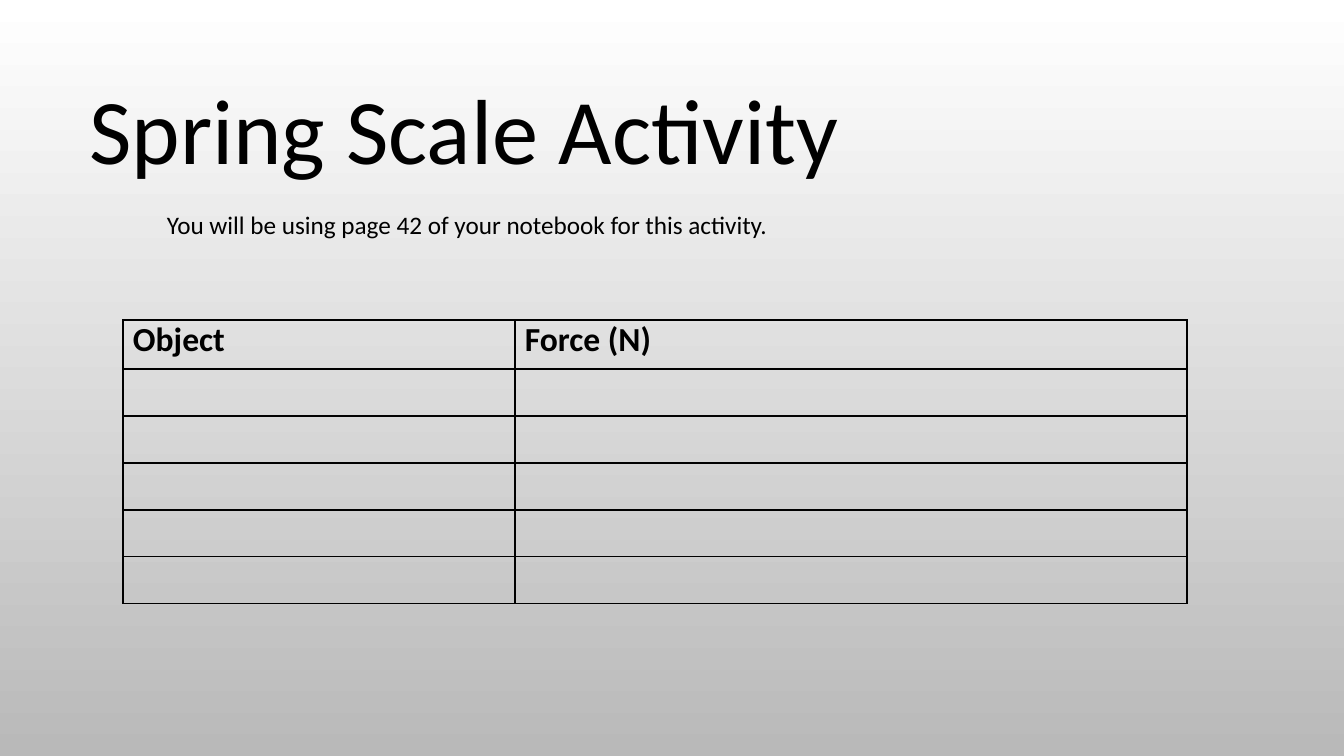
from dataclasses import dataclass

import pptx
import pptx.dml.color
import pptx.enum.text
import pptx.oxml
import pptx.oxml.ns
import pptx.util


@dataclass(frozen=True)
class Theme:
    font: str = "Calibri"
    ink: str = "000000"
    backdrop: tuple = ("FFFFFF", "B9B9B9")
    title_size: int = 66
    note_size: int = 18
    header_size: int = 24
    border_width: int = 1


class SlideBuilder:
    EMU_PER_PX = 914400 / 100.8

    def __init__(self, theme, width, height):
        self.theme = theme
        self.deck = pptx.Presentation()
        self.deck.slide_width = self.px(width)
        self.deck.slide_height = self.px(height)
        self.slide = self.deck.slides.add_slide(self.deck.slide_layouts[5])

    def px(self, length):
        return pptx.util.Emu(round(length * self.EMU_PER_PX))

    def color(self, code):
        return pptx.dml.color.RGBColor.from_string(code)

    def background(self):
        fill = self.slide.background.fill
        fill.gradient()
        fill.gradient_angle = 270
        for stop, code in zip(fill.gradient_stops, self.theme.backdrop):
            stop.color.rgb = self.color(code)

    def set_text(self, frame, text, size, bold=False):
        frame.text = text
        paragraph = frame.paragraphs[0]
        paragraph.alignment = pptx.enum.text.PP_ALIGN.LEFT
        for run in paragraph.runs:
            run.font.name = self.theme.font
            run.font.size = pptx.util.Pt(size)
            run.font.bold = bold
            run.font.color.rgb = self.color(self.theme.ink)

    def fit_frame(self, frame):
        frame.word_wrap = True
        frame.auto_size = pptx.enum.text.MSO_AUTO_SIZE.NONE
        frame.vertical_anchor = pptx.enum.text.MSO_ANCHOR.TOP

    def title(self, text, left, top, width, height):
        heading = self.slide.shapes.title
        heading.left, heading.top = self.px(left), self.px(top)
        heading.width, heading.height = self.px(width), self.px(height)
        self.fit_frame(heading.text_frame)
        self.set_text(heading.text_frame, text, self.theme.title_size)

    def note(self, text, left, top, width, height):
        box = self.slide.shapes.add_textbox(
            self.px(left), self.px(top), self.px(width), self.px(height))
        self.fit_frame(box.text_frame)
        self.set_text(box.text_frame, text, self.theme.note_size)

    def outline(self, cell):
        properties = cell._tc.get_or_add_tcPr()
        width = pptx.util.Pt(self.theme.border_width)
        for side in ("lnL", "lnR", "lnT", "lnB"):
            properties.append(pptx.oxml.parse_xml(
                f'<a:{side} {pptx.oxml.ns.nsdecls("a")} w="{width}">'
                f'<a:solidFill><a:srgbClr val="{self.theme.ink}"/></a:solidFill>'
                f'</a:{side}>'))

    def table(self, headers, left, top, column_widths, row_heights):
        grid = self.slide.shapes.add_table(
            len(row_heights), len(column_widths), self.px(left), self.px(top),
            self.px(sum(column_widths)), self.px(sum(row_heights))).table
        grid.first_row = grid.horz_banding = False
        for column, width in zip(grid.columns, column_widths):
            column.width = self.px(width)
        for row, height in zip(grid.rows, row_heights):
            row.height = self.px(height)
        for cell in grid.iter_cells():
            cell.margin_left = cell.margin_right = self.px(10)
            cell.margin_top = cell.margin_bottom = 0
            self.outline(cell)
            cell.fill.background()
        for cell, header in zip(grid.rows[0].cells, headers):
            self.set_text(cell.text_frame, header, self.theme.header_size, bold=True)


def main():
    activity = SlideBuilder(Theme(), 1344, 756)
    activity.background()
    activity.title("Spring Scale Activity", 79, 67, 1187, 122)
    activity.note("You will be using page 42 of your notebook for this activity.",
                  157, 204, 929, 40)
    activity.table(("Object", "Force (N)"), 123, 320, (392, 672), [49] + [47] * 5)
    activity.deck.save("out.pptx")


if __name__ == "__main__":
    main()
